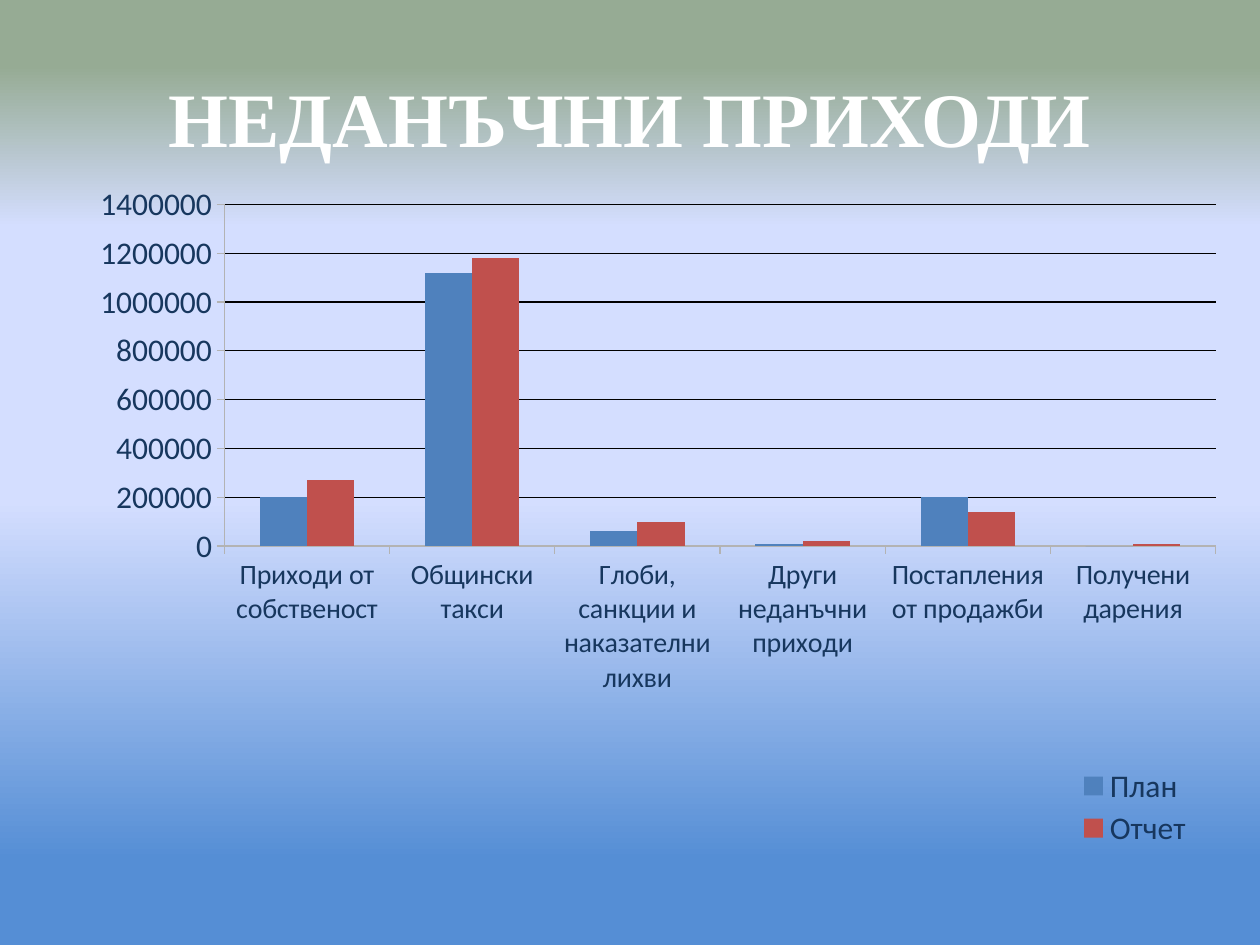
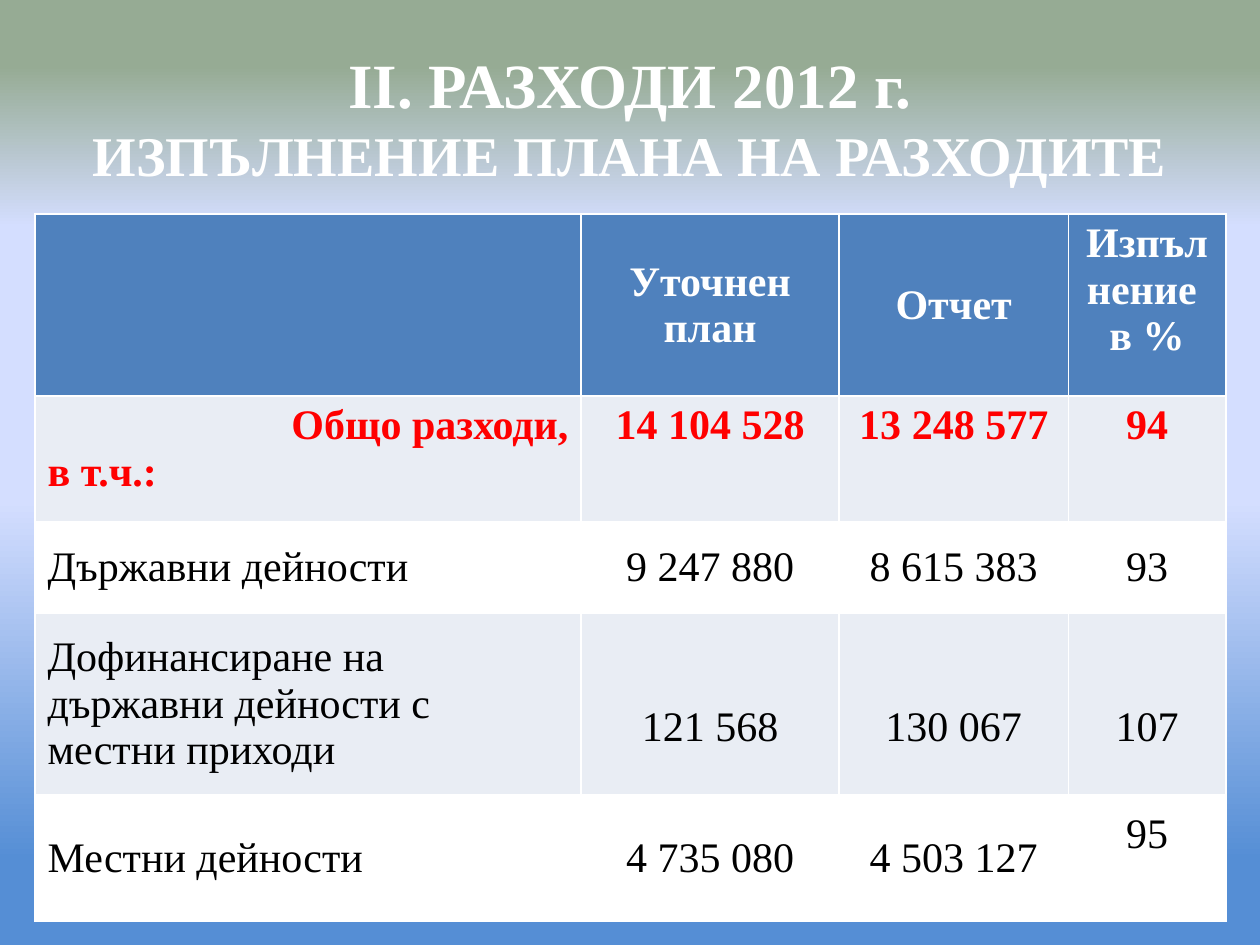
from copy import deepcopy
from dataclasses import dataclass

from lxml import etree
from pptx import Presentation
from pptx.chart.data import CategoryChartData
from pptx.dml.color import RGBColor
from pptx.enum.chart import XL_CHART_TYPE as ChartType, XL_LEGEND_POSITION as LegendPosition
from pptx.enum.chart import XL_TICK_MARK as TickMark
from pptx.enum.text import MSO_ANCHOR as Anchor, PP_ALIGN as Align
from pptx.oxml import parse_xml
from pptx.oxml.ns import nsdecls, qn
from pptx.util import Pt

# Shared style
WHITE = RGBColor(0xFF, 0xFF, 0xFF)
BLACK = RGBColor(0x00, 0x00, 0x00)
RED = RGBColor(0xFF, 0x00, 0x00)
NAVY = RGBColor(0x17, 0x37, 0x5E)
BLUE = RGBColor(0x4F, 0x81, 0xBD)
BRICK = RGBColor(0xC0, 0x50, 0x4D)
PALE = RGBColor(0xE9, 0xED, 0xF4)
AXIS_GRAY = RGBColor(0xB3, 0xB3, 0xB3)
SKY = RGBColor(0x55, 0x8E, 0xD5)
LAVENDER = RGBColor(0xD4, 0xDE, 0xFF)
SAGE = RGBColor(0x96, 0xAB, 0x94)
BACKGROUND_STOPS = [(0.09, SKY), (0.47, LAVENDER), (0.76, LAVENDER), (0.93, SAGE)]
SERIF = "Times New Roman"
SANS = "Calibri"
TITLE_ONLY_LAYOUT = 5
CELL_MARGIN = 3.6
TEXT_LINE = 27


@dataclass
class TitleLine:
    text: str
    size: float


@dataclass
class Series:
    name: str
    values: list[int]
    color: RGBColor


@dataclass
class Cell:
    text: str
    aligns: tuple = (Align.CENTER,)
    anchor: Anchor = Anchor.MIDDLE
    space_above: float = 0
    space_below: float = 0


@dataclass
class Row:
    height: float
    fill: RGBColor
    color: RGBColor
    bold: bool
    cells: list[Cell]


# Slide 1 content
INCOME_CATEGORIES = [
    "Приходи от собственост", "Общински такси", "Глоби, санкции и наказателни лихви",
    "Други неданъчни приходи", "Постапления от продажби", "Получени дарения",
]
INCOME_SERIES = [
    Series("План", [200000, 1120000, 60000, 10000, 200000, 0], BLUE),
    Series("Отчет", [270000, 1180000, 100000, 20000, 140000, 10000], BRICK),
]

# Slide 2 content
LEFT = (Align.LEFT,)
TOP = Anchor.TOP
COLUMN_WIDTHS = [312, 147.5, 131, 90]
EXPENSE_ROWS = [
    Row(104, BLUE, WHITE, True, [
        Cell(""), Cell("Уточнен план"), Cell("Отчет"),
        Cell("Изпълнение \nв %", (Align.CENTER, Align.CENTER), TOP)]),
    Row(72, PALE, RED, True, [
        Cell("Общо разходи,\nв т.ч.:", (Align.RIGHT, Align.LEFT), TOP),
        *(Cell(text, anchor=TOP) for text in ("14 104 528", "13 248 577", "94"))]),
    Row(52, WHITE, BLACK, False, [
        Cell("Държавни дейности", LEFT), Cell("9 247 880"), Cell("8 615 383"), Cell("93")]),
    Row(104, PALE, BLACK, False, [
        Cell("Дофинансиране на държавни дейности с местни приходи", LEFT),
        *(Cell(text, space_above=TEXT_LINE) for text in ("121 568", "130 067", "107"))]),
    Row(72, WHITE, BLACK, False, [
        Cell("Местни дейности", LEFT), Cell("4 735 080"), Cell("4 503 127"),
        Cell("95", space_below=TEXT_LINE)]),
]


def style_font(font, name: str, size: float, color: RGBColor, bold: bool = False) -> None:
    font.name = name
    font.size = Pt(size)
    font.bold = bold
    font.color.rgb = color


def paint_background(master) -> None:
    fill = master.background.fill
    fill.gradient()
    fill.gradient_angle = 90
    stop_list = master.element.find(".//" + qn("a:gsLst"))
    while len(stop_list) < len(BACKGROUND_STOPS):
        stop_list.append(deepcopy(stop_list[0]))
    for stop, (position, color) in zip(fill.gradient_stops, BACKGROUND_STOPS):
        stop.position = position
        stop.color.rgb = color


def add_titled_slide(presentation, lines: list[TitleLine]):
    slide = presentation.slides.add_slide(presentation.slide_layouts[TITLE_ONLY_LAYOUT])
    title = slide.shapes.title
    title.left, title.top, title.width, title.height = Pt(36), Pt(21.6), Pt(648), Pt(90)
    title.text_frame.vertical_anchor = Anchor.MIDDLE
    paragraph = title.text_frame.paragraphs[0]
    paragraph.alignment = Align.CENTER
    style_font(paragraph.font, SERIF, lines[0].size, WHITE, True)
    for index, line in enumerate(lines):
        if index:
            paragraph.add_line_break()
        run = paragraph.add_run()
        run.text = line.text
        run.font.size = Pt(line.size)
    return slide


def manual_layout(x: float, y: float, width: float, height: float, inner: bool = False):
    target = '<c:layoutTarget val="inner"/>' if inner else ""
    return parse_xml(
        f'<c:layout {nsdecls("c")}><c:manualLayout>{target}'
        '<c:xMode val="edge"/><c:yMode val="edge"/>'
        f'<c:x val="{x}"/><c:y val="{y}"/><c:w val="{width}"/><c:h val="{height}"/>'
        '</c:manualLayout></c:layout>')


def place_part(part, layout, after: str | None = None) -> None:
    """Give a chart part a fixed layout, replacing the automatic one."""
    for previous in part.findall(qn("c:layout")):
        part.remove(previous)
    if after:
        part.find(qn(after)).addnext(layout)
    else:
        part.insert(0, layout)


def add_income_chart(slide) -> None:
    data = CategoryChartData(number_format="General")
    data.categories = INCOME_CATEGORIES
    for series in INCOME_SERIES:
        data.add_series(series.name, series.values)
    chart = slide.shapes.add_chart(
        ChartType.COLUMN_CLUSTERED, Pt(36), Pt(100), Pt(659), Pt(420), data).chart
    chart.has_title = False
    style_font(chart.font, SANS, 18, NAVY)

    # Columns
    plot = chart.plots[0]
    plot.gap_width = 150
    plot.overlap = 0
    plot.vary_by_categories = False
    for column, series in zip(plot.series, INCOME_SERIES):
        column.format.fill.solid()
        column.format.fill.fore_color.rgb = series.color

    # Axes
    for axis, size in ((chart.category_axis, 16), (chart.value_axis, 18)):
        axis.major_tick_mark = TickMark.OUTSIDE
        axis.minor_tick_mark = TickMark.NONE
        axis.format.line.color.rgb = AXIS_GRAY
        style_font(axis.tick_labels.font, SANS, size, NAVY)
    value_axis = chart.value_axis
    value_axis.minimum_scale = 0
    value_axis.maximum_scale = 1400000
    value_axis.major_unit = 200000
    value_axis.has_major_gridlines = True
    gridline = value_axis.major_gridlines.format.line
    gridline.color.rgb = BLACK
    gridline.width = Pt(0.75)

    # Legend and plot positions
    chart.has_legend = True
    chart.legend.position = LegendPosition.RIGHT
    chart.legend.include_in_layout = False
    chart_space = chart.element if hasattr(chart, "element") else chart._chartSpace
    place_part(chart_space.find(".//" + qn("c:legend")),
               manual_layout(0.87, 0.8, 0.12, 0.12), "c:legendPos")
    place_part(chart_space.find(".//" + qn("c:plotArea")),
               manual_layout(0.14, 0.04, 0.86, 0.465, inner=True))


def add_cell_borders(table_cell) -> None:
    properties = table_cell._tc.get_or_add_tcPr()
    for index, side in enumerate(("lnL", "lnR", "lnT", "lnB")):
        line = etree.Element(qn(f"a:{side}"), w=str(Pt(1)))
        fill = etree.SubElement(line, qn("a:solidFill"))
        etree.SubElement(fill, qn("a:srgbClr"), val=str(WHITE))
        properties.insert(index, line)


def fill_cell(table_cell, cell: Cell, row: Row) -> None:
    table_cell.fill.solid()
    table_cell.fill.fore_color.rgb = row.fill
    add_cell_borders(table_cell)
    table_cell.vertical_anchor = cell.anchor
    table_cell.margin_top = Pt(CELL_MARGIN + cell.space_above)
    table_cell.margin_bottom = Pt(CELL_MARGIN + cell.space_below)
    table_cell.text = cell.text
    for paragraph, align in zip(table_cell.text_frame.paragraphs, cell.aligns):
        paragraph.alignment = align
        style_font(paragraph.font, SERIF, 24, row.color, row.bold)


def add_expense_table(slide) -> None:
    table = slide.shapes.add_table(
        len(EXPENSE_ROWS), len(COLUMN_WIDTHS), Pt(20), Pt(122.4),
        Pt(sum(COLUMN_WIDTHS)), Pt(sum(row.height for row in EXPENSE_ROWS))).table
    table.first_row = False
    table.horz_banding = False
    for column, width in zip(table.columns, COLUMN_WIDTHS):
        column.width = Pt(width)
    for table_row, row in zip(table.rows, EXPENSE_ROWS):
        table_row.height = Pt(row.height)
        for table_cell, cell in zip(table_row.cells, row.cells):
            fill_cell(table_cell, cell, row)


def main() -> None:
    presentation = Presentation()
    presentation.slide_width, presentation.slide_height = Pt(720), Pt(540)
    paint_background(presentation.slide_master)

    # Slide 1: non-tax income
    add_income_chart(add_titled_slide(presentation, [TitleLine("НЕДАНЪЧНИ ПРИХОДИ", 44)]))

    # Slide 2: expenses against plan
    add_expense_table(add_titled_slide(presentation, [
        TitleLine("ІІ. РАЗХОДИ 2012 г.", 36),
        TitleLine("ИЗПЪЛНЕНИЕ ПЛАНА НА РАЗХОДИТЕ", 32),
    ]))
    presentation.save("out.pptx")


if __name__ == "__main__":
    main()
